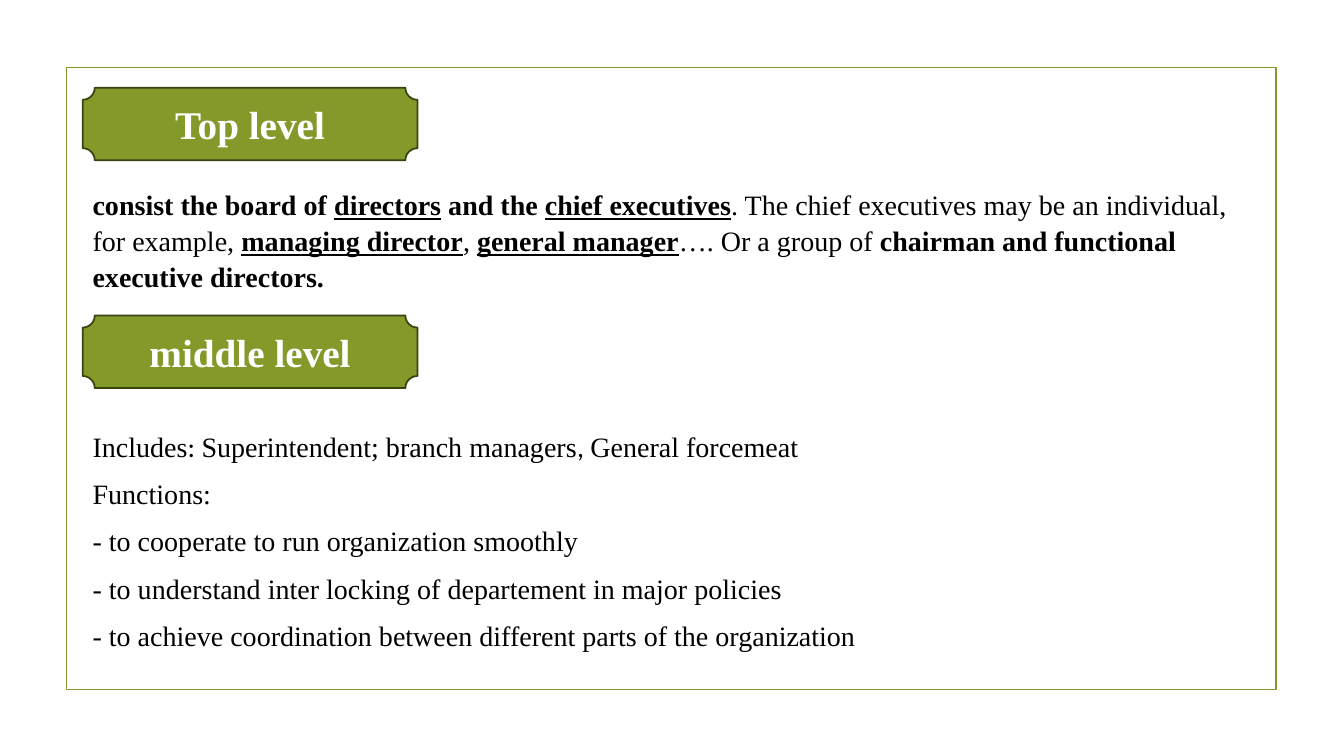
from pptx import Presentation
from pptx.dml.color import RGBColor
from pptx.enum.shapes import MSO_SHAPE
from pptx.enum.text import MSO_ANCHOR, MSO_AUTO_SIZE, PP_ALIGN
from pptx.util import Inches, Pt

COLORS = {"olive": "83992A", "dark_olive": "394312", "white": "FFFFFF", "black": "000000"}
SERIF, SANS = "Times New Roman", "Calibri"
PLAIN, BOLD, KEY = (False, False), (True, False), (True, True)  # bold, underline

TOP_LEVEL = [[
    ("consist the board of ", SERIF, BOLD),
    ("directors", SERIF, KEY),
    (" and the ", SERIF, BOLD),
    ("chief executives", SERIF, KEY),
    (". The chief executives may be an individual, for example, ", SERIF, PLAIN),
    ("managing director", SERIF, KEY),
    (", ", SERIF, PLAIN),
    ("general manager", SERIF, KEY),
    ("…. Or a group of ", SERIF, PLAIN),
    ("chairman and functional executive directors.", SERIF, BOLD),
]]
MIDDLE_LEVEL = [[
    ("Includes", SERIF, PLAIN),
    (": ", SANS, PLAIN),
    ("Superintendent; branch managers", SERIF, PLAIN),
    (", ", SANS, PLAIN),
    ("General forcemeat", SERIF, PLAIN),
]] + [[(line, SERIF, PLAIN)] for line in (
    "Functions:",
    "- to cooperate to run organization smoothly",
    "- to understand inter locking of departement in major policies",
    "- to achieve coordination between different parts of the organization",
)]


def color(name):
    return RGBColor.from_string(COLORS[name])


def format_run(r, font, size, color_name, bold, underline=False):
    r.font.name, r.font.size = font, Pt(size)
    r.font.bold, r.font.underline = bold, underline
    r.font.color.rgb = color(color_name)


def add_outlined(slide, kind, box, line, fill=None):
    """Add a preset shape with a thin outline and an optional fill."""
    sp = slide.shapes.add_shape(kind, *map(Inches, box))
    sp.shadow.inherit = False
    if fill:
        sp.fill.solid()
        sp.fill.fore_color.rgb = color(fill)
    else:
        sp.fill.background()
    sp.line.color.rgb = color(line)
    sp.line.width = Pt(1.25)
    return sp


def add_heading(slide, text, box):
    sp = add_outlined(slide, MSO_SHAPE.PLAQUE, box, "dark_olive", "olive")
    tf = sp.text_frame
    tf.text = text
    tf.vertical_anchor = MSO_ANCHOR.MIDDLE
    p = tf.paragraphs[0]
    p.alignment = PP_ALIGN.CENTER
    format_run(p.runs[0], SERIF, 28, "white", True)


def add_body(slide, paragraphs, box):
    tf = slide.shapes.add_textbox(*map(Inches, box)).text_frame
    tf.word_wrap = True
    tf.auto_size = MSO_AUTO_SIZE.SHAPE_TO_FIT_TEXT
    for i, runs in enumerate(paragraphs):
        p = tf.add_paragraph() if i else tf.paragraphs[0]
        p.line_spacing, p.space_after = 1.07, Pt(8)
        for text, font, (bold, underline) in runs:
            r = p.add_run()
            r.text = text
            format_run(r, font, 20, "black", bold, underline)


def add_level(slide, heading, paragraphs, box, body_offset):
    """Place a plaque at the top of the box and its text below it."""
    left, top, width, height = box
    add_heading(slide, heading, (left, top, 3.32, 0.72))
    add_body(slide, paragraphs, (left, top + body_offset, width, height - body_offset))


def main():
    prs = Presentation()
    prs.slide_width, prs.slide_height = Inches(13.33), Inches(7.5)
    slide = prs.slides.add_slide(prs.slide_layouts[6])
    add_outlined(slide, MSO_SHAPE.RECTANGLE, (0.66, 0.67, 12, 6.17), "olive")
    add_level(slide, "Top level", TOP_LEVEL, (0.82, 0.87, 11.76, 2.08), 0.92)
    add_level(slide, "middle level", MIDDLE_LEVEL, (0.82, 3.13, 11.09, 3.39), 1.06)
    prs.save("out.pptx")


if __name__ == "__main__":
    main()
